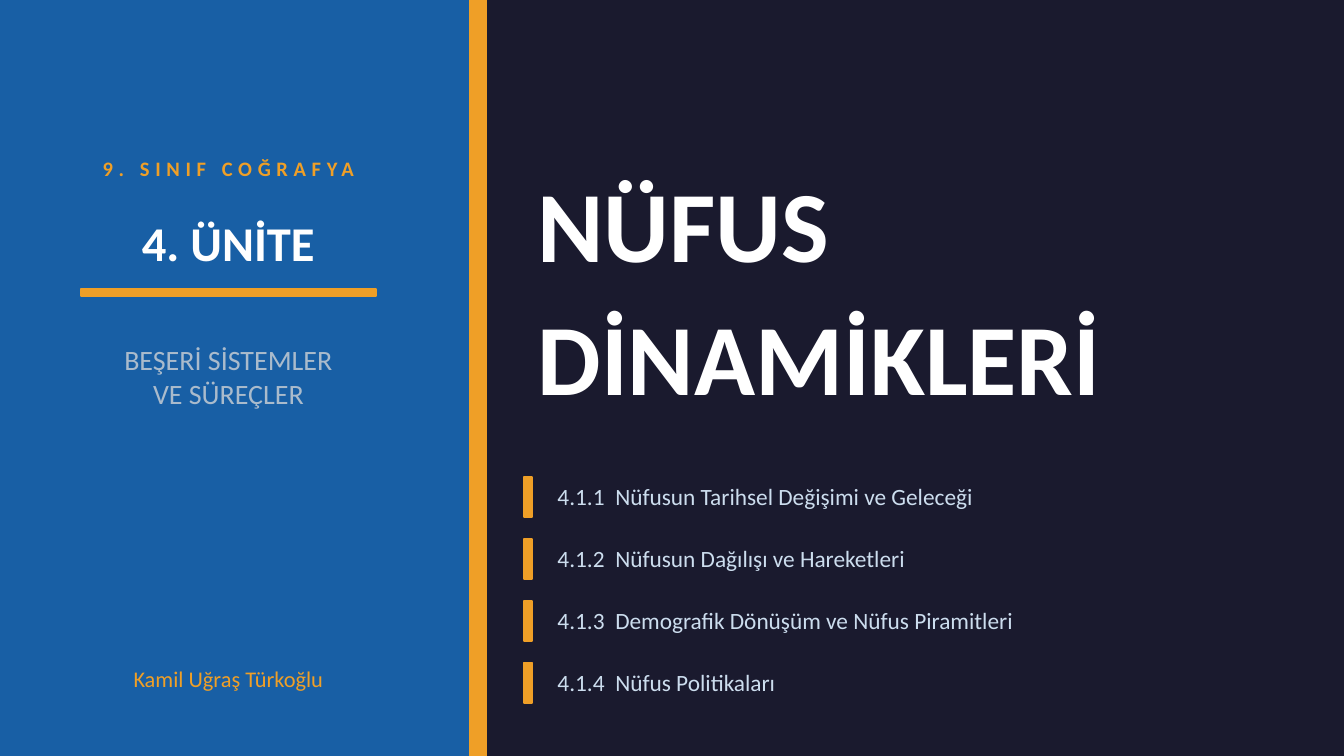
"""Build the opening slide of a geography unit on population dynamics."""
from lxml import etree
from pptx import Presentation
from pptx.dml.color import RGBColor
from pptx.enum.shapes import MSO_SHAPE
from pptx.enum.text import MSO_ANCHOR, MSO_AUTO_SIZE, PP_ALIGN
from pptx.oxml.ns import qn
from pptx.util import Inches, Pt

RECTANGLE = MSO_SHAPE.RECTANGLE
MIDDLE = MSO_ANCHOR.MIDDLE
NO_AUTOFIT = MSO_AUTO_SIZE.NONE
LEFT, CENTER = PP_ALIGN.LEFT, PP_ALIGN.CENTER

WIDTH = 10
HEIGHT = WIDTH * 9 / 16
NAVY, BLUE, ORANGE, WHITE = "1A1A2E", "185FA5", "EF9F27", "FFFFFF"
GREY, PALE = "AABBCC", "CCDDEE"

TITLE = ["NÜFUS", "DİNAMİKLERİ"]
PANEL_TEXTS = [
    (1, 0.5, ["9. SINIF COĞRAFYA"], dict(size=11, color=ORANGE, bold=True, spacing=3)),
    (1.55, 0.5, ["4. ÜNİTE"], dict(size=26, color=WHITE, bold=True)),
    (2.3, 1, ["BEŞERİ SİSTEMLER", "VE SÜREÇLER"], dict(size=15, color=GREY)),
    (4.8, 0.5, ["Kamil Uğraş Türkoğlu"], dict(size=12, color=ORANGE)),
]
TOPICS = [
    ("4.1.1", "Nüfusun Tarihsel Değişimi ve Geleceği"),
    ("4.1.2", "Nüfusun Dağılışı ve Hareketleri"),
    ("4.1.3", "Demografik Dönüşüm ve Nüfus Piramitleri"),
    ("4.1.4", "Nüfus Politikaları"),
]

PANEL_WIDTH, STRIPE_WIDTH = 3.5, 0.12
PANEL_TEXT_LEFT, PANEL_TEXT_WIDTH = 0.2, 3
CONTENT_LEFT = 3.9
TOPIC_TOP, TOPIC_PITCH = 3.55, 0.46
TOPIC_TAB = 0.43


def rgb(value):
    return RGBColor.from_string(value)


def add_bar(slide, left, top, width, height, color):
    bar = slide.shapes.add_shape(
        RECTANGLE, Inches(left), Inches(top), Inches(width), Inches(height))
    bar.shadow.inherit = False
    bar.fill.solid()
    bar.fill.fore_color.rgb = rgb(color)
    bar.line.color.rgb = rgb(color)
    bar.line.width = Pt(1)


def write_text(shape, box, lines, size, color, bold=False, align=LEFT,
               line_spacing=None, spacing=None, tab=None):
    shape.left, shape.top, shape.width, shape.height = map(Inches, box)
    frame = shape.text_frame
    frame.word_wrap = True
    frame.auto_size = NO_AUTOFIT
    frame.vertical_anchor = MIDDLE
    for index, line in enumerate(lines):
        paragraph = frame.add_paragraph() if index else frame.paragraphs[0]
        paragraph.alignment = align
        if line_spacing:
            paragraph.line_spacing = line_spacing
        if tab:
            tabs = etree.SubElement(paragraph._p.get_or_add_pPr(), qn("a:tabLst"))
            etree.SubElement(tabs, qn("a:tab"), pos=str(Inches(tab)), algn="l")
        run = paragraph.add_run()
        run.text = line
        run.font.name = "Calibri"
        run.font.size = Pt(size)
        run.font.bold = bold
        run.font.color.rgb = rgb(color)
        if spacing:
            run._r.get_or_add_rPr().set("spc", str(spacing * 100))


def add_text(slide, box, lines, **style):
    write_text(slide.shapes.add_textbox(0, 0, 0, 0), box, lines, **style)


def main():
    presentation = Presentation()
    presentation.slide_width = Inches(WIDTH)
    presentation.slide_height = Inches(HEIGHT)
    slide = presentation.slides.add_slide(presentation.slide_layouts[5])
    slide.background.fill.solid()
    slide.background.fill.fore_color.rgb = rgb(NAVY)

    write_text(slide.shapes.title, (CONTENT_LEFT, 0.8, 5.7, 2.6), TITLE,
               size=54, color=WHITE, bold=True, line_spacing=1.1)

    add_bar(slide, 0, 0, PANEL_WIDTH, HEIGHT, BLUE)
    add_bar(slide, PANEL_WIDTH, 0, STRIPE_WIDTH, HEIGHT, ORANGE)
    add_bar(slide, 0.6, 2.15, 2.2, 0.05, ORANGE)
    for top, height, lines, style in PANEL_TEXTS:
        add_text(slide, (PANEL_TEXT_LEFT, top, PANEL_TEXT_WIDTH, height), lines,
                 align=CENTER, **style)

    for index, (number, topic) in enumerate(TOPICS):
        top = TOPIC_TOP + index * TOPIC_PITCH
        add_bar(slide, CONTENT_LEFT, top, 0.06, 0.3, ORANGE)
        add_text(slide, (CONTENT_LEFT + 0.15, top - 0.03, 5.6, 0.35),
                 [f"{number}\t{topic}"], size=12.5, color=PALE, tab=TOPIC_TAB)

    presentation.save("out.pptx")


if __name__ == "__main__":
    main()
